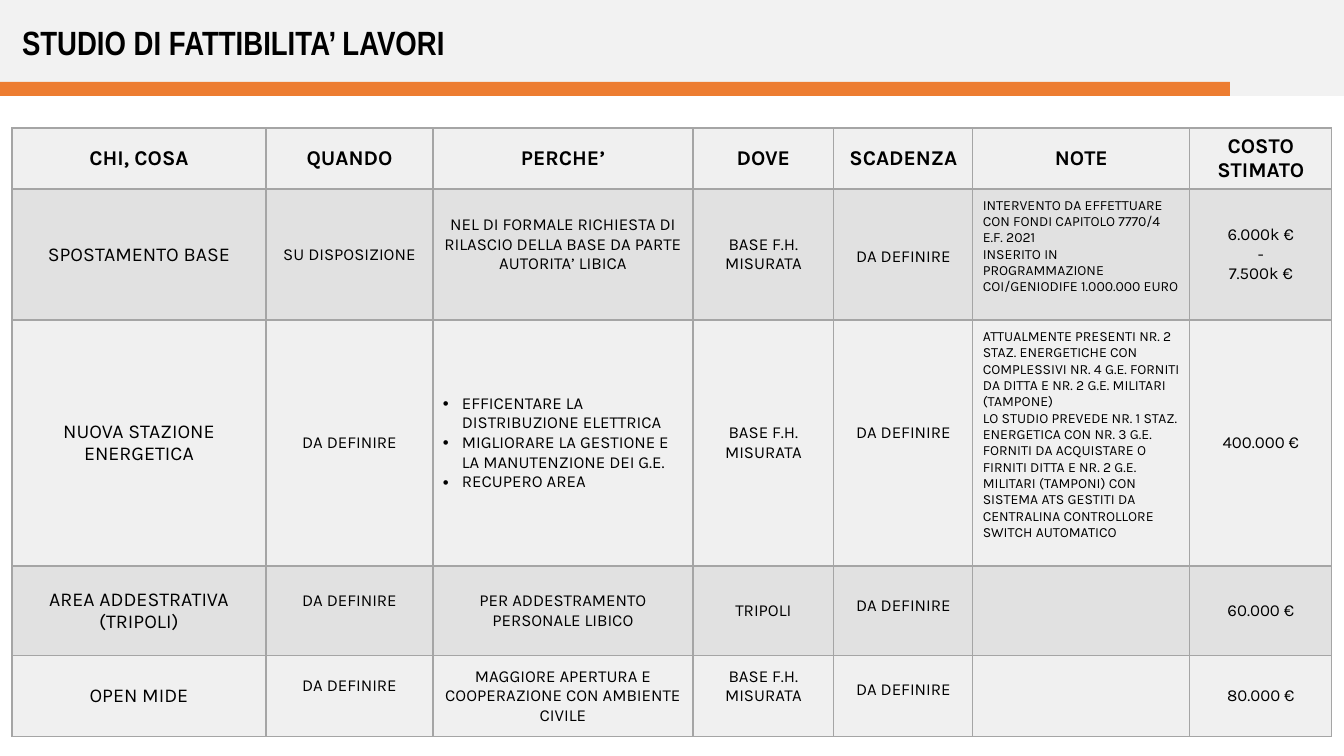
from lxml import etree
from pptx import Presentation
from pptx.dml.color import RGBColor
from pptx.enum import shapes, text
from pptx.oxml import ns
from pptx.util import Emu, Pt

BLACK = RGBColor(0x00, 0x00, 0x00)
BAND = RGBColor(0xF2, 0xF2, 0xF2)
ORANGE = RGBColor(0xED, 0x7D, 0x31)
LIGHT = RGBColor(0xF0, 0xF0, 0xF0)
DARK = RGBColor(0xE1, 0xE1, 0xE1)
GRID = RGBColor(0xA5, 0xA5, 0xA5)

COLUMNS = [254, 167, 260, 141, 139, 217, 142]
ROWS = [61, 131, 246, 90, 81]
SIZES = [14, 12, 12, 12, 12, 10, 12]
PERCHE, NOTE = 2, 5
BULLETED = {(2, PERCHE)}

CELLS = [
    ["CHI, COSA", "QUANDO", "PERCHE’", "DOVE", "SCADENZA", "NOTE", "COSTO STIMATO"],
    ["SPOSTAMENTO BASE", "SU DISPOSIZIONE",
     "NEL DI FORMALE RICHIESTA DI RILASCIO DELLA BASE DA PARTE AUTORITA’ LIBICA",
     "BASE F.H.\nMISURATA", "DA DEFINIRE",
     "INTERVENTO DA EFFETTUARE CON FONDI CAPITOLO 7770/4\nE.F. 2021\n"
     "INSERITO IN PROGRAMMAZIONE COI/GENIODIFE 1.000.000 EURO",
     "6.000k €\n-\n7.500k €"],
    ["NUOVA STAZIONE ENERGETICA", "DA DEFINIRE",
     "EFFICENTARE LA DISTRIBUZIONE ELETTRICA\n"
     "MIGLIORARE LA GESTIONE E LA MANUTENZIONE DEI G.E.\nRECUPERO AREA",
     "BASE F.H.\nMISURATA", "DA DEFINIRE",
     "ATTUALMENTE PRESENTI NR. 2 STAZ. ENERGETICHE CON COMPLESSIVI NR. 4 G.E. "
     "FORNITI DA DITTA E NR. 2 G.E. MILITARI (TAMPONE)\n"
     "LO STUDIO PREVEDE NR. 1 STAZ. ENERGETICA CON NR. 3 G.E. FORNITI DA "
     "ACQUISTARE O FIRNITI DITTA E NR. 2 G.E. MILITARI (TAMPONI) CON SISTEMA ATS "
     "GESTITI DA CENTRALINA CONTROLLORE SWITCH AUTOMATICO",
     "400.000 €"],
    ["AREA ADDESTRATIVA (TRIPOLI)", "DA DEFINIRE", "PER ADDESTRAMENTO PERSONALE LIBICO",
     "TRIPOLI", "DA DEFINIRE", "", "60.000 €"],
    ["OPEN MIDE", "DA DEFINIRE", "MAGGIORE APERTURA E COOPERAZIONE CON AMBIENTE CIVILE",
     "BASE F.H.\nMISURATA", "DA DEFINIRE", "", "80.000 €"],
]
# Vertical offset in px from the middle of the cell, by (row, column)
SHIFTS = {(1, 2): -10, (1, 4): 2, (1, 5): -8, (2, 4): -10, (2, 5): -8,
          (3, 1): -10, (3, 4): -5, (4, 1): -10, (4, 3): -10, (4, 4): -7}


def px(n):
    return Emu(round(n * 914400 / 100.8))


def write(tf, content, font="Karla", size=12, bold=False, color=BLACK,
          align=text.PP_ALIGN.CENTER, bullet=False):
    for i, line in enumerate(content.split("\n")):
        p = tf.add_paragraph() if i else tf.paragraphs[0]
        p.alignment = align
        if bullet:
            pPr = p._p.get_or_add_pPr()
            pPr.set("marL", str(px(19)))
            pPr.set("indent", str(-px(19)))
            etree.SubElement(pPr, ns.qn("a:buFont"), typeface="Arial")
            etree.SubElement(pPr, ns.qn("a:buChar"), char="•")
        r = p.add_run()
        r.text = line
        r.font.name, r.font.size, r.font.bold = font, Pt(size), bold
        r.font.color.rgb = color


class Deck:
    def __init__(self, width, height):
        self.prs = Presentation()
        self.prs.slide_width, self.prs.slide_height = px(width), px(height)
        self.slide = self.prs.slides.add_slide(self.prs.slide_layouts[5])

    def bar(self, x, y, w, h, color):
        sp = self.slide.shapes.add_shape(shapes.MSO_SHAPE.RECTANGLE,
                                         px(x), px(y), px(w), px(h))
        sp.shadow.inherit = False
        sp.fill.solid()
        sp.fill.fore_color.rgb = color
        sp.line.fill.background()

    def title(self, content, x, y, w, h):
        sp = self.slide.shapes.title
        sp.left, sp.top, sp.width, sp.height = px(x), px(y), px(w), px(h)
        sp.element.getparent().append(sp.element)  # in front of the bars
        tf = sp.text_frame
        tf.word_wrap = True
        tf.auto_size = text.MSO_AUTO_SIZE.NONE
        tf.vertical_anchor = text.MSO_ANCHOR.MIDDLE
        write(tf, content, font="Arial Narrow", size=24, bold=True,
              align=text.PP_ALIGN.LEFT)

    def table(self, x, y):
        frame = self.slide.shapes.add_table(len(ROWS), len(COLUMNS), px(x), px(y),
                                            px(sum(COLUMNS)), px(sum(ROWS)))
        table = frame.table
        for column, width in zip(table.columns, COLUMNS):
            column.width = px(width)
        for row, height in zip(table.rows, ROWS):
            row.height = px(height)
        for i, contents in enumerate(CELLS):
            for j, content in enumerate(contents):
                self.cell(table.cell(i, j), content, i, j)

    def cell(self, cell, content, i, j):
        cell.fill.solid()
        cell.fill.fore_color.rgb = DARK if i % 2 else LIGHT
        self.borders(cell)
        cell.vertical_anchor = text.MSO_ANCHOR.MIDDLE
        shift = SHIFTS.get((i, j), 0)
        cell.margin_left = cell.margin_right = px(10)
        cell.margin_top = px(5 + 2 * max(shift, 0))
        cell.margin_bottom = px(5 + 2 * max(-shift, 0))
        if not content:
            return
        bullet = (i, j) in BULLETED
        left = bullet or (i > 0 and j == NOTE)
        write(cell.text_frame, content, size=SIZES[j] if i else 15, bold=i == 0,
              align=text.PP_ALIGN.LEFT if left else text.PP_ALIGN.CENTER, bullet=bullet)

    def borders(self, cell):
        tcPr = cell._tc.get_or_add_tcPr()
        for k, side in enumerate(("lnL", "lnR", "lnT", "lnB")):
            ln = etree.Element(ns.qn("a:" + side), w=str(Pt(1)))
            fill = etree.SubElement(ln, ns.qn("a:solidFill"))
            etree.SubElement(fill, ns.qn("a:srgbClr"), val=str(GRID))
            tcPr.insert(k, ln)


def main():
    deck = Deck(1344, 756)
    deck.bar(0, 0, 1344, 96, BAND)
    deck.bar(0, 82, 1230, 14, ORANGE)
    deck.table(12, 128)
    deck.title("STUDIO DI FATTIBILITA’ LAVORI", 12, 17, 1207, 50)
    deck.prs.save("out.pptx")


if __name__ == "__main__":
    main()
